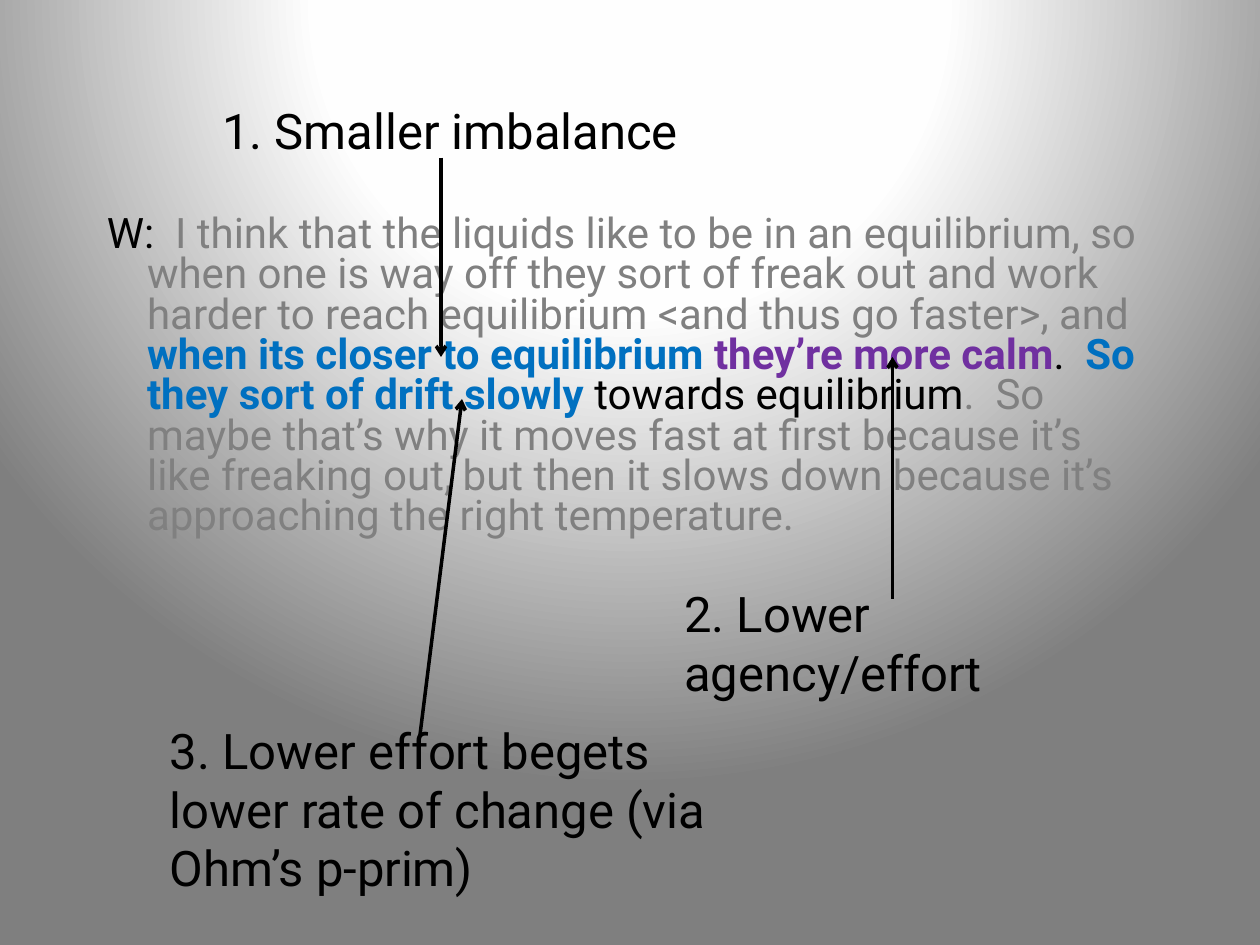
from pptx import Presentation
from pptx import util as u
from pptx.dml.color import RGBColor
from pptx.enum import shapes, text
from pptx.oxml import parse_xml
from pptx.oxml.ns import nsdecls
from lxml import etree

BLACK, GREY, BLUE, PURPLE = "000000", "808080", "0070C0", "7030A0"


def color(value):
    return RGBColor.from_string(value)


def add_text(box, runs, size):
    """Add a wrapped text box holding one paragraph of (words, colour, bold) runs."""
    frame = slide.shapes.add_textbox(*map(u.Pt, box)).text_frame
    frame.word_wrap = True
    frame.vertical_anchor = text.MSO_ANCHOR.TOP
    paragraph = frame.paragraphs[0]
    for words, ink, bold in runs:
        run = paragraph.add_run()
        run.text = words
        run.font.color.rgb = color(ink)
        for key, value in {"name": "Roboto", "size": u.Pt(size), "bold": bold}.items():
            setattr(run.font, key, value)
    return paragraph


deck = Presentation()
deck.slide_width, deck.slide_height = u.Pt(720), u.Pt(540)
slide = deck.slides.add_slide(deck.slide_layouts[6])

# Background: round gradient centred above the slide
stops = "".join(
    f'<a:gs pos="{percent * 1000}"><a:srgbClr val="{shade}"/></a:gs>'
    for percent, shade in [(0, "FFFFFF"), (40, "FEFEFE"), (100, "7F7F7F")]
)
slide.background.fill.solid()
solid = slide.element.cSld.find(".//{*}solidFill")
solid.getparent().replace(solid, parse_xml(
    f'<a:gradFill {nsdecls("a")} rotWithShape="1"><a:gsLst>{stops}</a:gsLst>'
    '<a:path path="circle"><a:fillToRect l="50000" t="-80000" r="50000" b="180000"/>'
    "</a:path></a:gradFill>"
))

# Student quote, with the key phrases picked out
quote = add_text((54, 120, 612, 384), [
    ("W:  ", BLACK, False),
    ("I think that the liquids like to be in an equilibrium, so when one is way off "
     "they sort of freak out and work harder to reach equilibrium "
     "<and thus go faster>, and ", GREY, False),
    ("when its closer to equilibrium ", BLUE, True),
    ("they’re more calm", PURPLE, True),
    (".  ", BLACK, False),
    ("So they sort of drift slowly ", BLUE, True),
    ("towards equilibrium", BLACK, False),
    (".  So maybe that’s why it moves fast at first because it’s like freaking out, "
     "but then it slows down because it’s approaching the right temperature.", GREY, False),
], 24)
quote.line_spacing = 0.8
hanging = {"marL": u.Pt(23), "indent": -u.Pt(23)}
for key, value in hanging.items():
    quote._p.get_or_add_pPr().set(key, str(value))

# Numbered comments
comments = [
    ((120, 54, 390, 41), "1. Smaller imbalance"),
    ((384, 330, 294, 41), "2. Lower agency/effort"),
    ((90, 408, 342, 109), "3. Lower effort begets lower rate of change (via Ohm’s p-prim)"),
]
for box, words in comments:
    add_text(box, [(words, BLACK, False)], 28)

# Arrows from each comment to its phrase
for ends in [(252, 90, 252, 204), (510, 342, 510, 204), (240, 420, 264, 228)]:
    arrow = slide.shapes.add_connector(shapes.MSO_CONNECTOR.STRAIGHT, *map(u.Pt, ends))
    arrow.line.color.rgb = color(BLACK)
    arrow.line.width = u.Pt(2)
    outline = arrow.line._get_or_add_ln()
    main = "{%s}" % outline.nsmap["a"]
    etree.SubElement(outline, main + "tailEnd", type="arrow")
    etree.SubElement(outline.getparent(), main + "effectLst")

deck.save("out.pptx")
